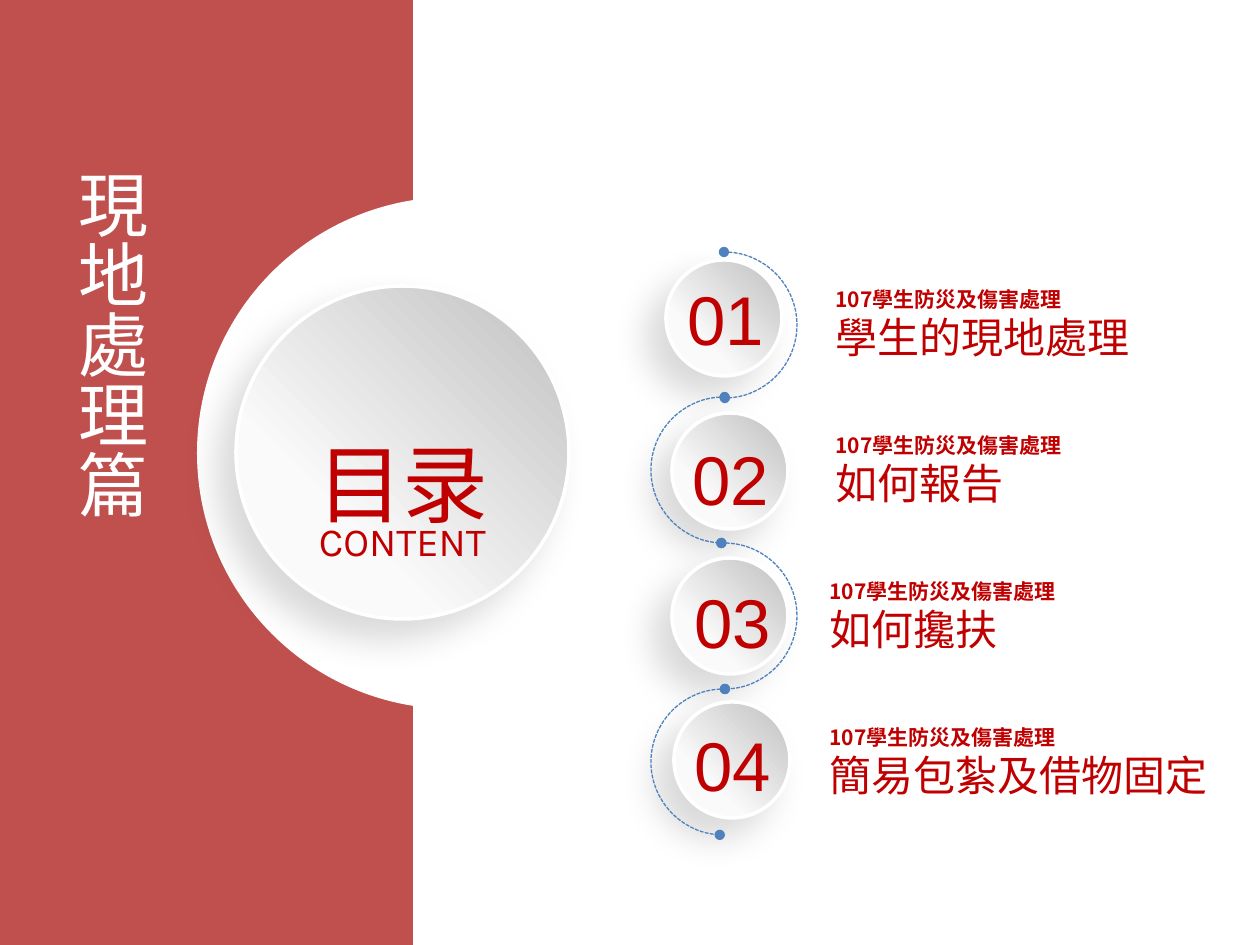
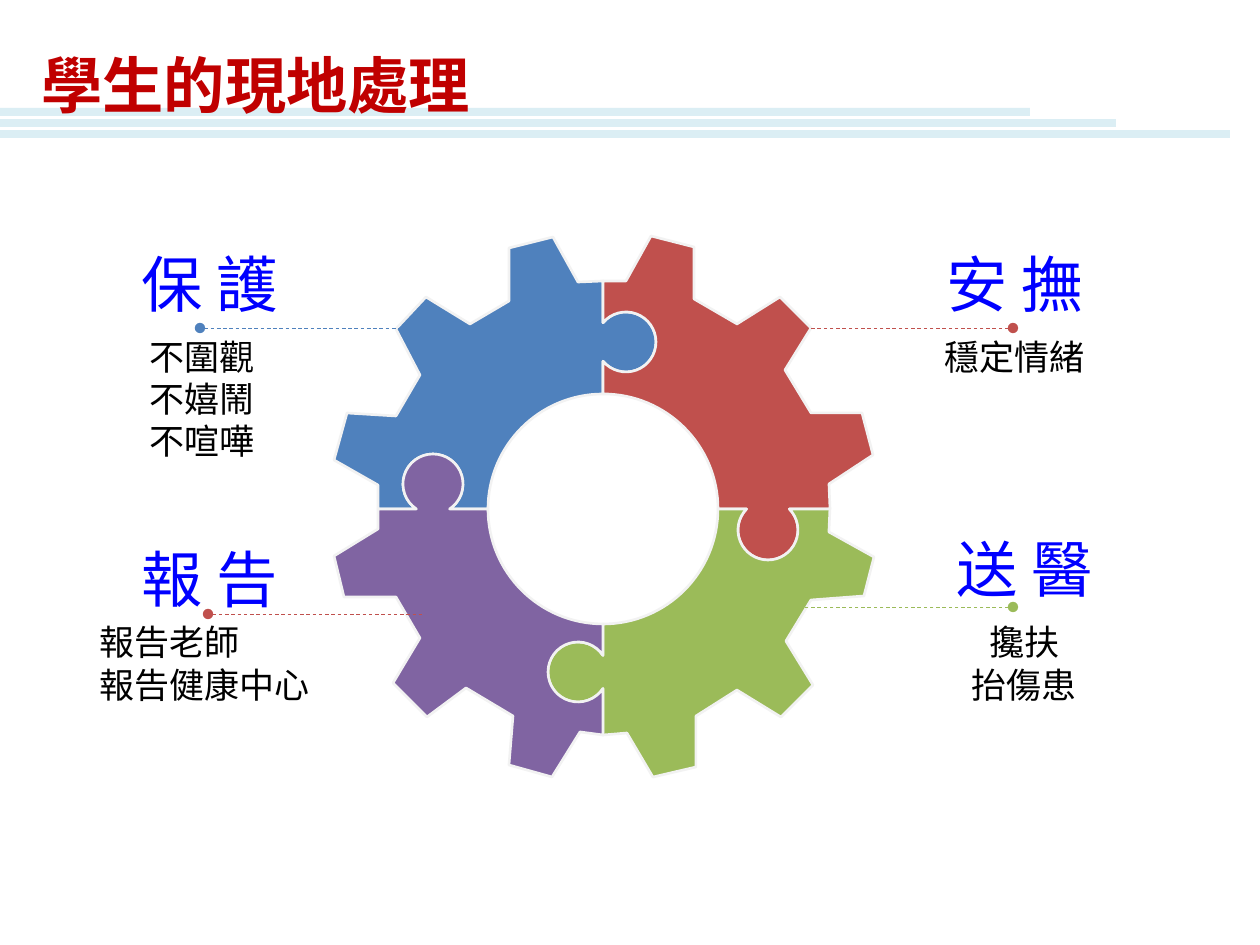
import math
import lxml.etree
import pptx
import pptx.dml.color
import pptx.enum.dml
import pptx.enum.shapes
import pptx.enum.text
import pptx.oxml.ns
import pptx.util

RGB = pptx.dml.color.RGBColor
SHAPE = pptx.enum.shapes.MSO_SHAPE
DASH = pptx.enum.dml.MSO_LINE
ALIGN = pptx.enum.text.PP_ALIGN
ANCHOR = pptx.enum.text.MSO_ANCHOR
AUTO = pptx.enum.text.MSO_AUTO_SIZE
qn = pptx.oxml.ns.qn

BLUE = RGB(0x4F, 0x81, 0xBD)
RED = RGB(0xC0, 0x50, 0x4D)
GREEN = RGB(0x9B, 0xBB, 0x59)
PURPLE = RGB(0x80, 0x64, 0xA2)
DARK_RED = RGB(0xC0, 0x00, 0x00)
HEADING_BLUE = RGB(0x00, 0x00, 0xFF)
PALE_BLUE = RGB(0xDB, 0xEE, 0xF4)
BLACK = RGB(0x00, 0x00, 0x00)
WHITE = RGB(0xFF, 0xFF, 0xFF)
EDGE = RGB(0xF2, 0xF2, 0xF2)
SHADE = RGB(0xBF, 0xBF, 0xBF)
LIGHT = RGB(0xFA, 0xFA, 0xFA)

CJK = "Noto Sans CJK SC"
PX_PER_INCH = 126
GEAR_CENTER = (603, 509)
BORE_RADIUS = 115
KNOB_RADIUS = 30
KNOBS = {0: (165, 21), 90: (163, 25), 180: (170, 25), 270: (167, 23)}

AGENDA = [
    ("01", (666, 260), (674, 270), (823, 323), "學生的現地處理"),
    ("02", (672, 413), (679, 430), (823, 271), "如何報告"),
    ("03", (672, 558), (681, 573), (817, 257), "如何攙扶"),
    ("04", (674, 702), (681, 716), (817, 407), "簡易包紮及借物固定"),
]
ARC_ADJUSTMENTS = [(162, 53.57), (161.69, 52.82), (160.73, 53.57), (161.53, 52.02)]

GEAR = [
    (BLUE, 180, [(378, 509), (378, 485), (334, 460), (347, 413), (396, 416),
                 (420, 375), (396, 329), (426, 297), (470, 324), (509, 301),
                 (509, 248), (553, 237), (578, 282), (603, 281)]),
    (RED, 270, [(603, 281), (626, 281), (651, 236), (694, 247), (694, 299),
                (737, 324), (780, 297), (811, 328), (785, 370), (811, 413),
                (862, 413), (873, 455), (829, 484), (830, 509)]),
    (GREEN, 0, [(830, 509), (829, 532), (874, 557), (864, 596), (811, 600),
                (786, 641), (813, 685), (781, 717), (737, 690), (696, 716),
                (696, 767), (653, 777), (627, 733), (603, 735)]),
    (PURPLE, 90, [(603, 735), (580, 732), (552, 777), (509, 765), (513, 716),
                  (466, 688), (427, 717), (393, 683), (420, 638), (396, 597),
                  (344, 597), (334, 556), (378, 529), (378, 509)]),
]

ACTIONS = [
    ("報 告", (115, 541, 189, 74), ["報告老師", "報告健康中心"], (99, 621, 221, 84), ALIGN.LEFT),
    ("保 護", (114, 246, 192, 74), ["不圍觀", "不嬉鬧", "不喧嘩"], (149, 336, 121, 127), ALIGN.LEFT),
    ("送 醫", (917, 531, 215, 74), ["攙扶", "抬傷患"], (917, 621, 215, 84), ALIGN.CENTER),
    ("安 撫", (907, 246, 215, 74), ["穩定情緒"], (907, 335, 215, 43), ALIGN.CENTER),
]
LEADERS = [
    (200, 435, 328, BLUE),
    (208, 425, 614, RED),
    (1013, 774, 328, RED),
    (1013, 774, 607, GREEN),
]


def px(n):
    return pptx.util.Emu(round(n * 914400 / PX_PER_INCH))


def assign(target, values):
    for name, value in values.items():
        setattr(target, name, value)


def add_child(parent, tag, **attrs):
    return lxml.etree.SubElement(parent, qn(tag), attrs)


def set_line(line, color, width, dash=None, ends=()):
    line.color.rgb = color
    line.width = pptx.util.Pt(width)
    if dash:
        line.dash_style = dash
    for end in ends:
        add_child(line._get_or_add_ln(), f"a:{end}", type="oval")


def add_preset(slide, kind, box, fill=None):
    sp = slide.shapes.add_shape(kind, *map(px, box))
    sp.shadow.inherit = False
    sp.line.fill.background()
    if fill is None:
        sp.fill.background()
    else:
        sp.fill.solid()
        sp.fill.fore_color.rgb = fill
    return sp


def add_button(slide, left, top, size):
    sp = add_preset(slide, SHAPE.OVAL, (left, top, size, size))
    sp.fill.gradient()
    sp.fill.gradient_angle = 225
    for stop, color, position in zip(sp.fill.gradient_stops, (SHADE, LIGHT), (0, 0.7)):
        stop.color.rgb = color
        stop.position = position
    set_line(sp.line, WHITE, 2)
    effects = sp._element.spPr.find(qn("a:effectLst"))
    shadow = add_child(effects, "a:outerShdw", blurRad=str(pptx.util.Pt(20)),
                       dist=str(pptx.util.Pt(15)), dir="8100000",
                       algn="tr", rotWithShape="0")
    color = add_child(shadow, "a:srgbClr", val="000000")
    add_child(color, "a:alpha", val="15000")


def add_arc(slide, box, adjustments, flipped):
    sp = add_preset(slide, SHAPE.ARC, box)
    for i, value in enumerate(adjustments):
        sp.adjustments[i] = value
    if flipped:
        sp._element.spPr.xfrm.set("flipH", "1")
    set_line(sp.line, BLUE, 0.75, DASH.SQUARE_DOT, ("headEnd", "tailEnd"))


def add_text(slide, box, lines, color, font=CJK, align=ALIGN.LEFT, spacing=None,
             baseline=None, inset=True, vert=None, **frame):
    tf = slide.shapes.add_textbox(*map(px, box)).text_frame
    assign(tf, {"word_wrap": True, "auto_size": AUTO.SHAPE_TO_FIT_TEXT, **frame})
    if not inset:
        assign(tf, dict.fromkeys(
            ("margin_left", "margin_top", "margin_right", "margin_bottom"), 0))
    if vert:
        tf._txBody.bodyPr.set("vert", vert)
    for i, (text, size, bold) in enumerate(lines):
        p = tf.add_paragraph() if i else tf.paragraphs[0]
        assign(p, {"alignment": align, "line_spacing": spacing})
        r = p.add_run()
        r.text = text
        assign(r.font, {"name": font, "size": pptx.util.Pt(size), "bold": bold})
        r.font.color.rgb = color
        rPr = r._r.get_or_add_rPr()
        add_child(rPr, "a:ea", typeface=font)
        if baseline:
            rPr.set("baseline", baseline)


def add_leader(slide, start, end, y, color):
    c = slide.shapes.add_connector(pptx.enum.shapes.MSO_CONNECTOR.STRAIGHT,
                                   px(start), px(y), px(end), px(y))
    set_line(c.line, color, 0.5, DASH.DASH, ("headEnd",))
    add_child(c._element.spPr, "a:effectLst")


def polar(center, radius, degrees):
    a = math.radians(degrees)
    return center[0] + radius * math.cos(a), center[1] + radius * math.sin(a)


def straight(*corners):
    points = [corners[0]]
    for a, b in zip(corners, corners[1:]):
        points += [a, b, b]
    return points


def arc(center, radius, start, end, pieces=1):
    step = (end - start) / pieces
    handle = 4 / 3 * math.tan(math.radians(step / 4))
    reach, lean = math.hypot(radius, radius * handle), math.degrees(math.atan(handle))
    points = [polar(center, radius, start)]
    for i in range(pieces):
        a, b = start + i * step, start + (i + 1) * step
        points += [polar(center, reach, a + lean), polar(center, reach, b - lean),
                   polar(center, radius, b)]
    return points


def seam(angle):
    distance, offset = KNOBS[angle]
    knob = polar(polar(GEAR_CENTER, distance, angle), offset, angle + 90)
    gap = math.degrees(math.acos(offset / KNOB_RADIUS))
    return arc(knob, KNOB_RADIUS, angle - 90 + gap, angle + 270 - gap, 4)


def join(*curves):
    points = list(curves[0])
    for curve in curves[1:]:
        points += straight(points[-1], curve[0])[1:] + curve[1:]
    return points


def add_gear_piece(slide, color, angle, corners):
    following = (angle + 90) % 360
    bore = arc(GEAR_CENTER, BORE_RADIUS, angle + 90, angle)
    points = join(straight(*corners), seam(following), bore,
                  seam(angle)[::-1], [corners[0]])
    points = [(px(x), px(y)) for x, y in points]
    builder = slide.shapes.build_freeform(*points[0])
    builder.add_line_segments(points[1:], close=True)
    sp = builder.convert_to_shape()
    steps = list(sp._element.iter(qn("a:lnTo")))
    for group in zip(steps[::3], steps[1::3], steps[2::3]):
        curve = lxml.etree.Element(qn("a:cubicBezTo"))
        group[0].addprevious(curve)
        for step in group:
            curve.append(step[0])
            step.getparent().remove(step)
    sp.shadow.inherit = False
    sp.fill.solid()
    sp.fill.fore_color.rgb = color
    set_line(sp.line, EDGE, 1.5)


def add_title(slide, text):
    for i, width in enumerate((1030, 1116, 1230)):
        add_preset(slide, SHAPE.RECTANGLE, (0, 108 + 11 * i, width, 8), PALE_BLUE)
    add_text(slide, (29, 41, 552, 87), [(text, 35, True)], DARK_RED)


def build_contents(slide):
    add_preset(slide, SHAPE.RECTANGLE, (0, 0, 413, 945), RED)
    add_preset(slide, SHAPE.OVAL, (197, 197, 512, 512), WHITE)
    add_button(slide, 236, 286, 333)
    centered = {"align": ALIGN.CENTER, "vertical_anchor": ANCHOR.MIDDLE, "word_wrap": False}
    raised = {**centered, "spacing": 1.5, "baseline": "12000"}
    add_text(slide, (291, 335, 224, 192), [("目录", 84.4, False)], DARK_RED, **raised)
    add_text(slide, (296, 474, 213, 86), [("CONTENT", 39.4, False)], DARK_RED, "Karla", **raised)
    for _, button, _, _, _ in AGENDA:
        add_button(slide, *button, 116)
    for i, (number, _, label, (left, width), topic) in enumerate(AGENDA):
        add_arc(slide, (651, 252 + 437 * i // 3, 146, 146), ARC_ADJUSTMENTS[i], i % 2 == 1)
        add_text(slide, (*label, 103, 96), [(number, 39.4, False)], DARK_RED, "Arial", **centered)
        add_text(slide, (left, 280 + 146 * i, width, 89),
                 [("107學生防災及傷害處理", 12, True), (topic, 24, False)], DARK_RED)
    add_text(slide, (48, 158, 111, 552), [("現地處理篇", 40, False)], WHITE, vert="eaVert")


def build_actions(slide):
    add_title(slide, "學生的現地處理")
    for heading, heading_box, steps, steps_box, align in ACTIONS:
        add_text(slide, heading_box, [(heading, 35, False)], HEADING_BLUE,
                 align=ALIGN.CENTER, inset=False)
        add_text(slide, steps_box, [(step, 20, False) for step in steps], BLACK,
                 align=align, inset=False)
    for piece in GEAR:
        add_gear_piece(slide, *piece)
    for leader in LEADERS:
        add_leader(slide, *leader)


def main():
    prs = pptx.Presentation()
    prs.slide_width, prs.slide_height = px(1260), px(945)
    for build in (build_contents, build_actions):
        build(prs.slides.add_slide(prs.slide_layouts[6]))
    prs.save("out.pptx")


if __name__ == "__main__":
    main()
